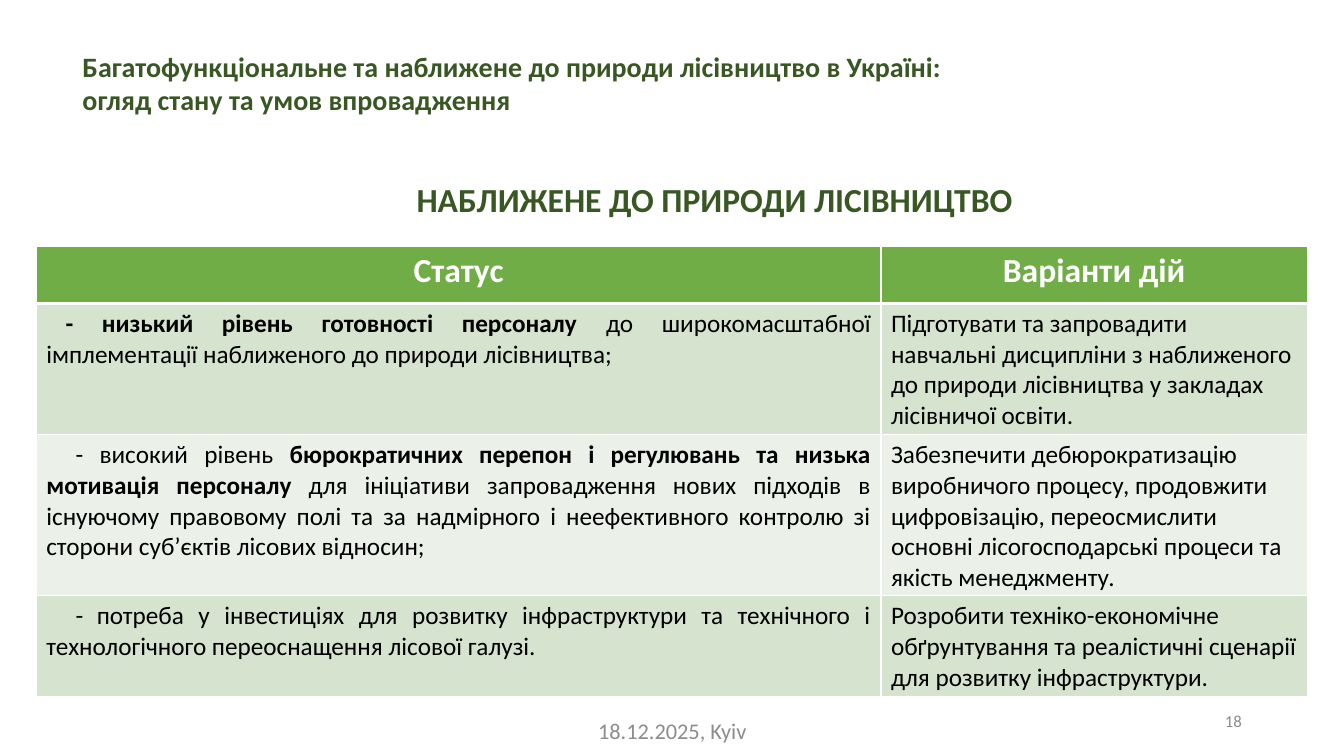
from lxml.etree import SubElement
from pptx import Presentation
from pptx.dml.color import RGBColor
from pptx.enum.text import MSO_ANCHOR, MSO_AUTO_SIZE, PP_ALIGN
from pptx.oxml.ns import qn
from pptx.util import Pt

WHITE, BLACK, GREY = "FFFFFF", "000000", "8C8C8C"
DARK_GREEN, HEADER_GREEN = "385723", "70AD47"
BANDS = ("D5E3CF", "EBF1E9")


def color(value):
    return RGBColor.from_string(value)


class SlideBuilder:
    font_name = "Calibri"

    def __init__(self, page):
        self.page = page

    def add_spans(self, frame, spans, align=PP_ALIGN.LEFT, indent=0, **style):
        """Fill the first paragraph with (text, bold) spans."""
        para = frame.paragraphs[0]
        para.alignment = align
        if indent:
            para._p.get_or_add_pPr().set("indent", str(Pt(indent)))
        for text, bold in spans:
            span = para.add_run()
            span.text = text
            formats = {"name": self.font_name, "size": Pt(style["size"]), "bold": bold}
            for name, value in formats.items():
                setattr(span.font, name, value)
            span.font.color.rgb = color(style["ink"])

    def text(self, place, text, bold=False, anchor=MSO_ANCHOR.TOP,
             auto_size=MSO_AUTO_SIZE.NONE, **style):
        box = self.page.shapes.add_textbox(*map(Pt, place))
        formats = {"word_wrap": True, "vertical_anchor": anchor, "auto_size": auto_size}
        for name, value in formats.items():
            setattr(box.text_frame, name, value)
        self.add_spans(box.text_frame, [(text, bold)], **style)

    def borders(self, cell, widths):
        properties = cell._tc.get_or_add_tcPr()
        for side, width in widths.items():
            line = SubElement(properties, qn(f"a:ln{side}"), w=str(Pt(width)))
            fill = SubElement(line, qn("a:solidFill"))
            SubElement(fill, qn("a:srgbClr"), val=WHITE)

    def table(self, place, widths, heights, header, rows):
        """Draw a header and banded rows of (indent, status spans, action)."""
        grid = self.page.shapes.add_table(len(heights), len(widths), *map(Pt, place)).table
        for column, width in zip(grid.columns, widths):
            column.width = Pt(width)
        for row, height in zip(grid.rows, heights):
            row.height = Pt(height)
        for index, title in enumerate(header):
            cell = grid.cell(0, index)
            self.add_spans(cell.text_frame, [(title, True)], PP_ALIGN.CENTER,
                           size=24, ink=WHITE)
        for index, (indent, status, action) in enumerate(rows, 1):
            self.add_spans(grid.cell(index, 0).text_frame, status, PP_ALIGN.JUSTIFY,
                           indent, size=18, ink=BLACK)
            self.add_spans(grid.cell(index, 1).text_frame, [(action, False)],
                           size=18, ink=BLACK)
        for row_index, row in enumerate(grid.rows):
            for cell in row.cells:
                self.borders(cell, {"L": 1, "R": 1, "T": 3 if row_index == 1 else 1,
                                    "B": 3 if row_index == 0 else 1})
                cell.fill.solid()
                band = BANDS[(row_index - 1) % 2] if row_index else HEADER_GREEN
                cell.fill.fore_color.rgb = color(band)


STATUS_ROWS = [
    (13.68,
     [("- низький рівень готовності персоналу ", True),
      ("до широкомасштабної імплементації наближеного до природи лісівництва;", False)],
     "Підготувати та запровадити навчальні дисципліни з наближеного до природи "
     "лісівництва у закладах лісівничої освіти."),
    (20.88,
     [("- високий рівень ", False),
      ("бюрократичних перепон і регулювань та низька мотивація персоналу", True),
      (" для ініціативи запровадження нових підходів в існуючому правовому полі та за "
       "надмірного і неефективного контролю зі сторони суб’єктів лісових відносин;", False)],
     "Забезпечити дебюрократизацію виробничого процесу, продовжити цифровізацію, "
     "переосмислити основні лісогосподарські процеси та якість менеджменту."),
    (20.88,
     [("-\tпотреба у інвестиціях для розвитку інфраструктури та технічного і "
       "технологічного переоснащення лісової галузі.", False)],
     "Розробити техніко-економічне обґрунтування та реалістичні сценарії для "
     "розвитку інфраструктури."),
]


def main():
    deck = Presentation()
    deck.slide_width, deck.slide_height = Pt(960), Pt(540)
    builder = SlideBuilder(deck.slides.add_slide(deck.slide_layouts[6]))
    grow = MSO_AUTO_SIZE.SHAPE_TO_FIT_TEXT
    builder.text((51.84, 31.68, 666.72, 55.44),
                 "Багатофункціональне та наближене до природи лісівництво в Україні: "
                 "огляд стану та умов впровадження",
                 bold=True, auto_size=grow, size=20, ink=DARK_GREEN)
    builder.text((281.52, 124.56, 457.92, 36), "НАБЛИЖЕНЕ ДО ПРИРОДИ ЛІСІВНИЦТВО",
                 bold=True, auto_size=grow, align=PP_ALIGN.CENTER, size=24, ink=DARK_GREEN)
    builder.table((25.92, 175.68, 907.92, 321.84), (603.36, 304.56),
                  (41.04, 93.6, 115.2, 72), ("Статус", "Варіанти дій"), STATUS_ROWS)
    builder.text((318.24, 500.4, 324, 43.2), "18.12.2025, Kyiv", anchor=MSO_ANCHOR.MIDDLE,
                 align=PP_ALIGN.CENTER, size=16, ink=GREY)
    builder.text((678.24, 500.4, 216, 28.8), "18", anchor=MSO_ANCHOR.MIDDLE,
                 align=PP_ALIGN.RIGHT, size=12, ink=GREY)
    deck.save("out.pptx")


if __name__ == "__main__":
    main()
